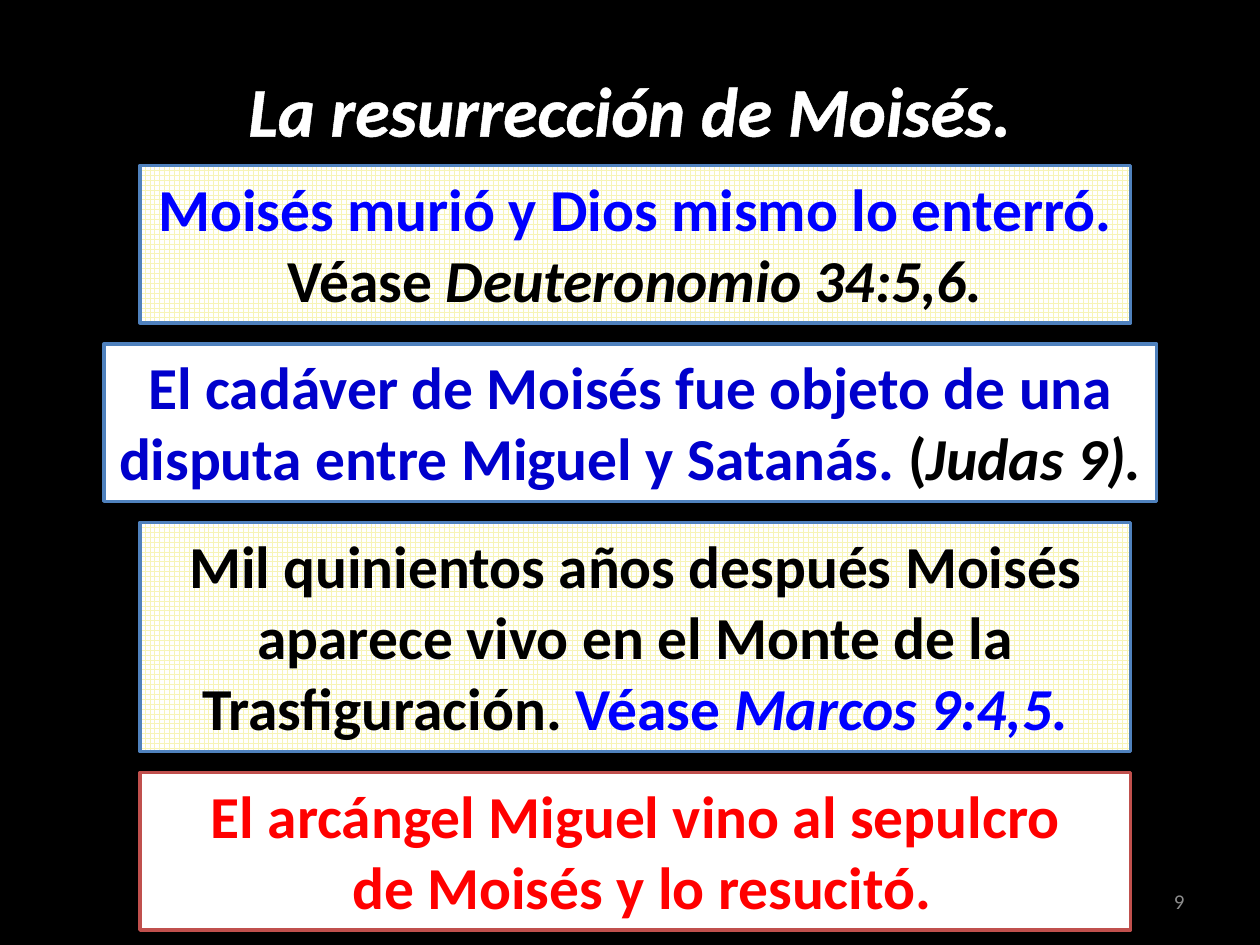
from lxml import etree
from pptx import Presentation
from pptx.dml.color import RGBColor as RGB
from pptx.enum.dml import MSO_PATTERN as PATTERN
from pptx.enum.shapes import MSO_SHAPE as SHAPE
from pptx.enum.text import MSO_ANCHOR as ANCHOR, MSO_AUTO_SIZE as AUTO, PP_ALIGN as ALIGN
from pptx.oxml.ns import qn
from pptx.util import Pt

COLORS = {
    "black": "000000", "white": "FFFFFF", "navy": "0000CC", "blue": "0000FF",
    "red": "FF0000", "gray": "8C8C8C", "grid": "F7F4B7",
    "blue_line": "4F81BD", "red_line": "C0504D",
}


class Deck:
    font = "Calibri"
    body_size = 34
    title_size = 40

    def __init__(self, width, height):
        self.prs = Presentation()
        self.prs.slide_width, self.prs.slide_height = Pt(width), Pt(height)

    def color(self, name):
        return RGB.from_string(COLORS[name])

    def new_slide(self, background):
        self.s = self.prs.slides.add_slide(self.prs.slide_layouts[5])
        fill = self.s.background.fill
        fill.solid()
        fill.fore_color.rgb = self.color(background)

    def outline(self, r, color):
        ln = etree.Element(qn("a:ln"), w=str(Pt(0.75)))
        fill = etree.SubElement(ln, qn("a:solidFill"))
        etree.SubElement(fill, qn("a:srgbClr"), val=COLORS[color])
        r._r.get_or_add_rPr().insert(0, ln)

    def add_text(self, sp, paragraphs, size, align=ALIGN.CENTER, anchor=ANCHOR.TOP, bold=True):
        tf = sp.text_frame
        tf.word_wrap, tf.vertical_anchor, tf.auto_size = True, anchor, AUTO.NONE
        for i, runs in enumerate(paragraphs):
            p = tf.add_paragraph() if i else tf.paragraphs[0]
            p.alignment = align
            for text, color, italic in runs:
                r = p.add_run()
                r.text = text
                r.font.name, r.font.size = self.font, Pt(size)
                r.font.bold, r.font.italic = bold, italic
                r.font.color.rgb = self.color(color)
                if bold:
                    self.outline(r, color)

    def title(self, text, left, top, width, height):
        sp = self.s.shapes.title
        sp.left, sp.top, sp.width, sp.height = map(Pt, (left, top, width, height))
        self.add_text(sp, [[(text, "white", True)]], self.title_size)

    def box(self, paragraphs, left, top, width, height, line, grid):
        sp = self.s.shapes.add_shape(SHAPE.RECTANGLE, *map(Pt, (left, top, width, height)))
        sp.shadow.inherit = False
        if grid:
            sp.fill.patterned()
            sp.fill.pattern = PATTERN.LARGE_GRID
            sp.fill.fore_color.rgb = self.color("grid")
            sp.fill.back_color.rgb = self.color("white")
        else:
            sp.fill.solid()
            sp.fill.fore_color.rgb = self.color("white")
        sp.line.color.rgb = self.color(line)
        sp.line.width = Pt(2)
        self.add_text(sp, paragraphs, self.body_size)

    def page_number(self, text, left, top, width, height):
        sp = self.s.shapes.add_textbox(*map(Pt, (left, top, width, height)))
        self.add_text(sp, [[(text, "gray", False)]], 12, ALIGN.RIGHT, ANCHOR.MIDDLE, False)


def main():
    deck = Deck(720, 540)
    deck.new_slide("black")
    deck.title("La resurrección de Moisés.", 77, 34.5, 566, 55.5)

    boxes = [
        (80, 566, 90, "blue_line", True, [[
            ("Moisés murió y Dios mismo lo enterró. ", "blue", False),
            ("Véase ", "black", False),
            ("Deuteronomio 34:5,6.", "black", True)]]),
        (59.5, 601.5, 90, "blue_line", False, [[
            ("El cadáver de Moisés fue objeto de una disputa entre Miguel y Satanás. ",
             "navy", False),
            ("(", "black", False),
            ("Judas 9).", "black", True)]]),
        (80, 566, 131, "blue_line", True, [[
            ("Mil quinientos años después Moisés aparece vivo en el Monte de la Trasfiguración. ",
             "black", False),
            ("Véase ", "blue", False),
            ("Marcos 9:4,5.", "blue", True)]]),
        (80, 566, 90, "red_line", False, [
            [("El arcángel Miguel vino al sepulcro", "red", False)],
            [(" de Moisés y lo resucitó.", "red", False)]]),
    ]
    top, gap = 94.5, 12
    for left, width, height, line, grid, paragraphs in boxes:
        deck.box(paragraphs, left, top, width, height, line, grid)
        top += height + gap

    deck.page_number("9", 516, 500.5, 168, 28.75)
    deck.prs.save("out.pptx")


if __name__ == "__main__":
    main()
